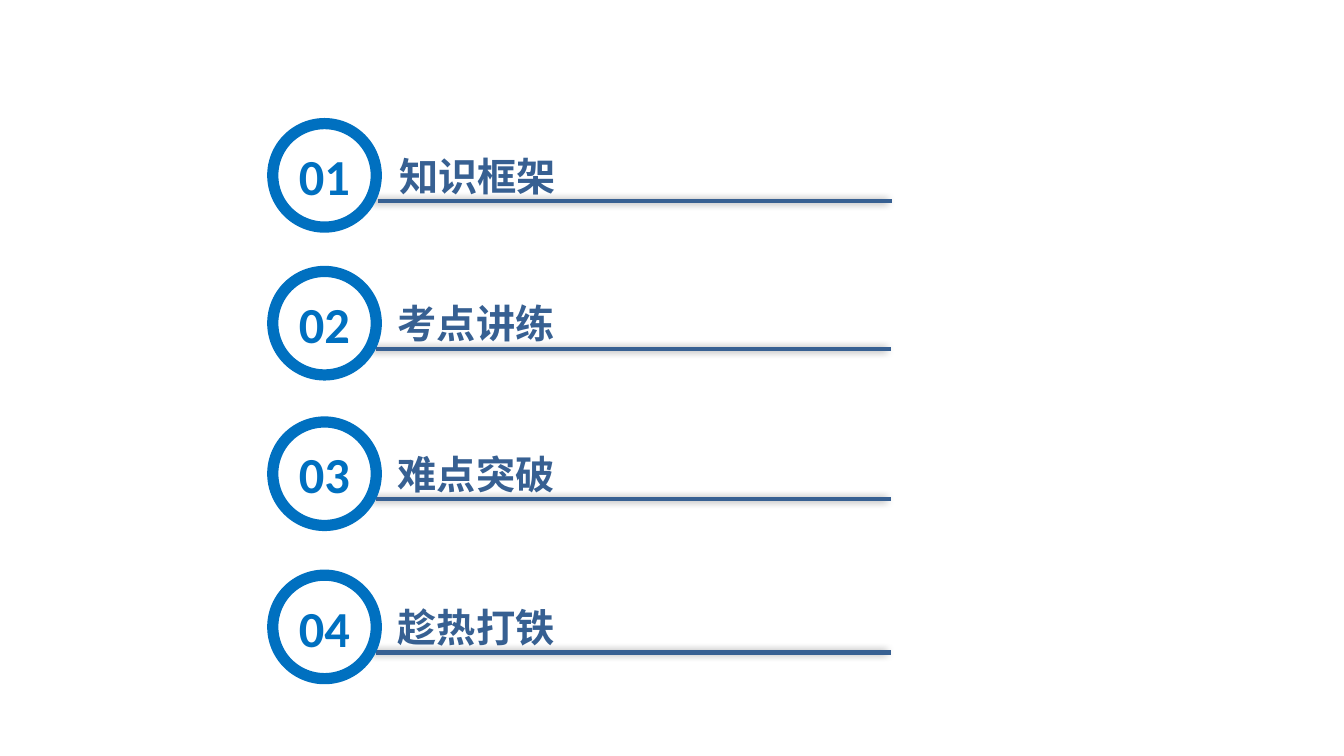
from lxml.etree import SubElement
from pptx import Presentation
from pptx.dml.color import RGBColor
from pptx.enum.shapes import MSO_CONNECTOR as Connector, MSO_SHAPE as Shape
from pptx.enum.text import MSO_ANCHOR as Anchor, MSO_AUTO_SIZE as AutoSize, PP_ALIGN as Align
from pptx.oxml.ns import qn
from pptx.util import Inches, Pt

COLORS = {"ring": "0070C0", "title": "376092", "shadow": "000000"}
CELL = Inches(0.1)  # the slide is a grid of 100 columns by 56.25 rows
COLUMNS, ROWS = 100, 56.25

# number, title, top row of the ring, shift of title and rule in columns
AGENDA = [
    ("01", "知识框架", 9.2, 0.1),
    ("02", "考点讲练", 20.2, 0),
    ("03", "难点突破", 31.4, 0),
    ("04", "趁热打铁", 42.8, 0),
]


def cells(*counts):
    return [round(count * CELL) for count in counts]


class AgendaSlide:
    number_font = {"name": "Calibri", "size": Pt(27), "bold": True}
    title_font = {"name": "Noto Sans CJK SC", "size": Pt(21), "bold": True}
    number_frame = {"vertical_anchor": Anchor.MIDDLE, "word_wrap": True,
                    "margin_left": Inches(0.07), "margin_right": Inches(0.07),
                    "margin_top": Inches(0.04), "margin_bottom": Inches(0.04)}
    title_frame = {"word_wrap": False, "auto_size": AutoSize.SHAPE_TO_FIT_TEXT,
                   "margin_left": Inches(0.04), "margin_right": Inches(0.04),
                   "margin_top": Inches(0.04), "margin_bottom": Inches(0.04)}

    def __init__(self, deck):
        self.slide = deck.slides.add_slide(deck.slide_layouts[6])

    def label(self, frame, words, frame_format, font_format, color, align):
        for name, value in frame_format.items():
            setattr(frame, name, value)
        paragraph = frame.paragraphs[0]
        paragraph.alignment = align
        run = paragraph.add_run()
        run.text = words
        for name, value in font_format.items():
            setattr(run.font, name, value)
        run.font.color.rgb = RGBColor.from_string(COLORS[color])
        SubElement(run.font._element, qn("a:ea"), typeface=font_format["name"])

    def stroke(self, line, color, width):
        line.color.rgb = RGBColor.from_string(COLORS[color])
        line.width = Pt(width)

    def ring(self, left, top, size, number):
        ring = self.slide.shapes.add_shape(Shape.OVAL, *cells(left, top, size, size))
        ring.shadow.inherit = False
        ring.fill.background()
        self.stroke(ring.line, "ring", 6)
        self.label(ring.text_frame, number, self.number_frame, self.number_font,
                   "ring", Align.CENTER)

    def title(self, left, top, width, height, words):
        title = self.slide.shapes.add_textbox(*cells(left, top, width, height))
        self.label(title.text_frame, words, self.title_frame, self.title_font,
                   "title", Align.LEFT)

    def rule(self, left, top, length):
        """Draw a horizontal line with a soft shadow towards the left."""
        rule = self.slide.shapes.add_connector(
            Connector.STRAIGHT, *cells(left, top, left + length, top))
        self.stroke(rule.line, "title", 2.25)
        effects = SubElement(rule._element.spPr, qn("a:effectLst"))
        shadow = SubElement(effects, qn("a:outerShdw"), blurRad=str(int(Pt(4))),
                            dist=str(int(Pt(3))), dir="10800000", rotWithShape="0")
        tint = SubElement(shadow, qn("a:srgbClr"), val=COLORS["shadow"])
        SubElement(tint, qn("a:alpha"), val="40000")

    def entry(self, number, words, top, shift):
        self.title(29.2 + shift, top + 1.7, 12.6, 4.3, words)
        self.rule(28 + shift, top + 5.75, 38.3)
        self.ring(20.3, top, 7.7, number)


def main():
    deck = Presentation()
    deck.slide_width, deck.slide_height = cells(COLUMNS, ROWS)
    agenda = AgendaSlide(deck)
    for item in AGENDA:
        agenda.entry(*item)
    deck.save("out.pptx")


if __name__ == "__main__":
    main()
